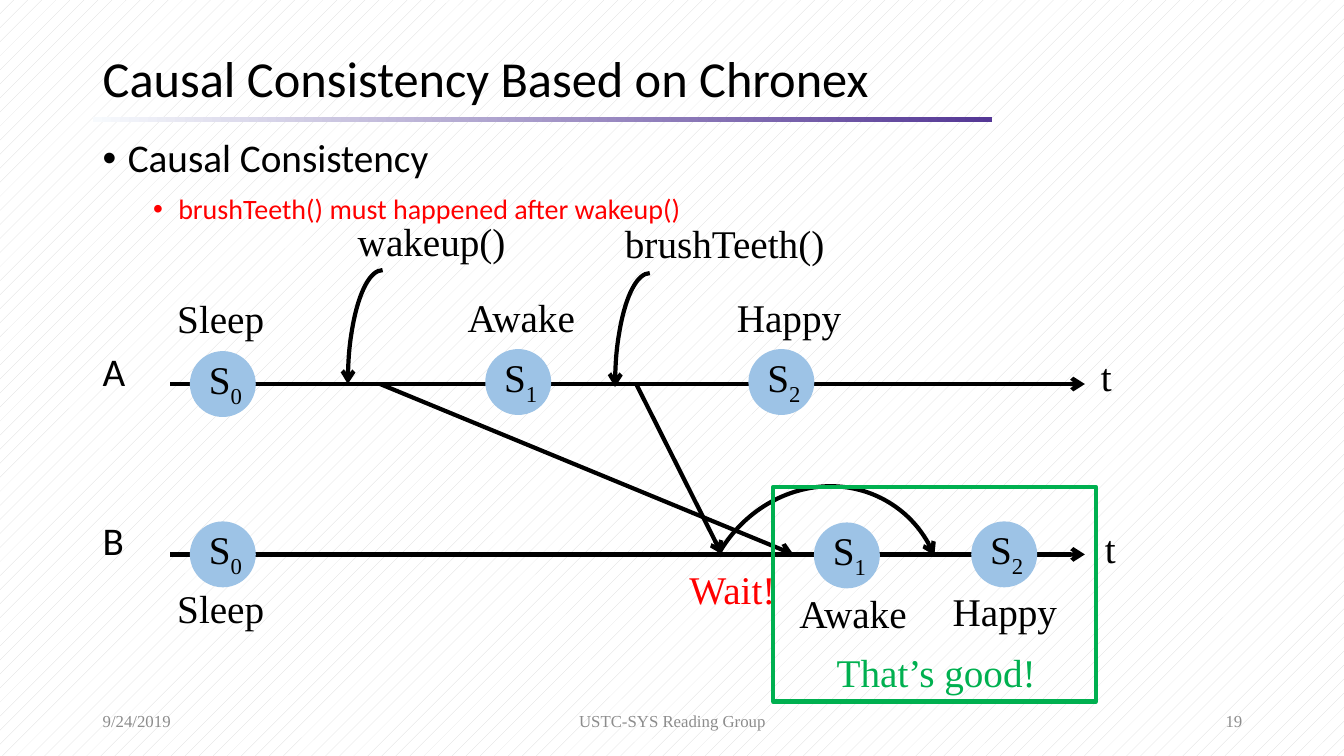
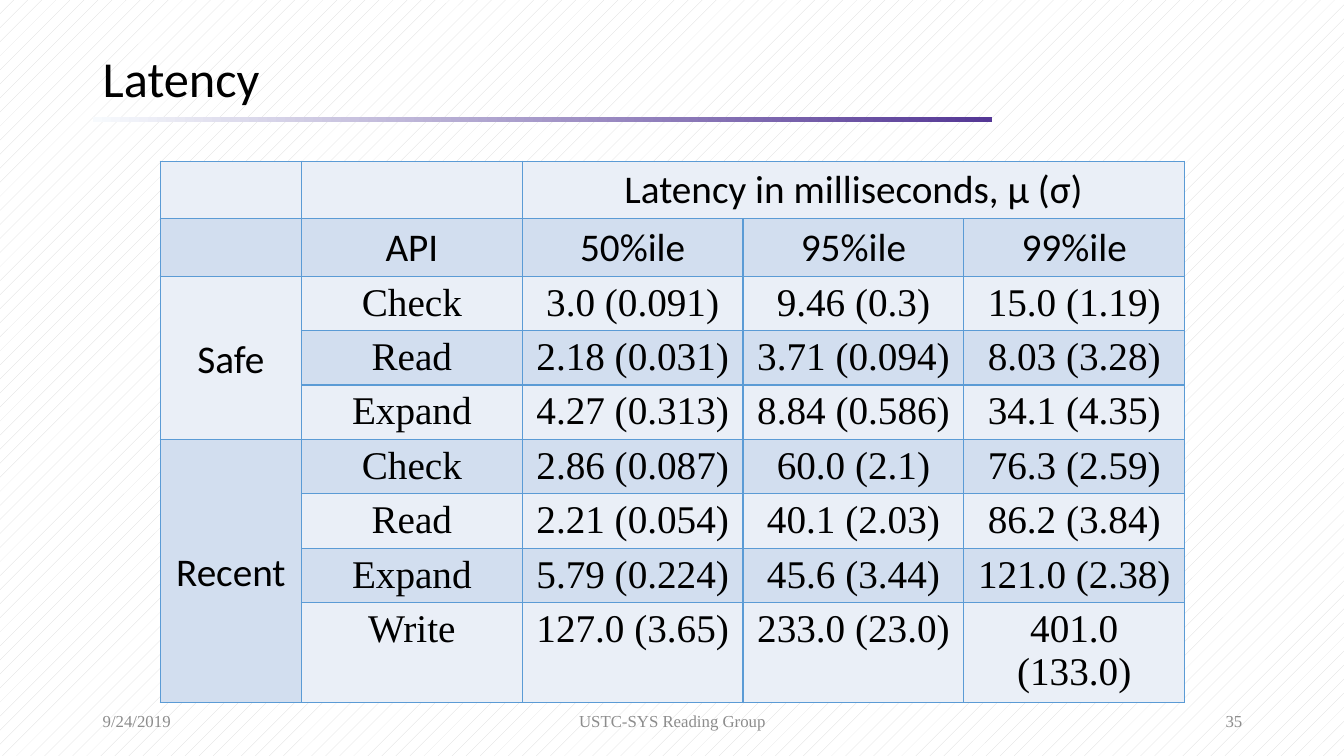
import dataclasses
import typing

import lxml.etree
import pptx
import pptx.dml.color
import pptx.enum.dml
import pptx.enum.shapes
import pptx.enum.text
import pptx.oxml.ns
import pptx.util

Inches = pptx.util.Inches
Pt = pptx.util.Pt
RGBColor = pptx.dml.color.RGBColor
Shapes = pptx.enum.shapes.MSO_SHAPE
Align = pptx.enum.text.PP_ALIGN
Anchor = pptx.enum.text.MSO_ANCHOR
qn = pptx.oxml.ns.qn

BLACK = RGBColor(0x00, 0x00, 0x00)
WHITE = RGBColor(0xFF, 0xFF, 0xFF)
RED = RGBColor(0xFF, 0x00, 0x00)
GREEN = RGBColor(0x00, 0xB0, 0x50)
GRAY = RGBColor(0x8C, 0x8C, 0x8C)
HATCH = RGBColor(0xD9, 0xD9, 0xD9)
BAR_START = RGBColor(0xF7, 0xFA, 0xFD)
BAR_END = RGBColor(0x54, 0x37, 0x95)
STATE_BLUE = RGBColor(0x9D, 0xC3, 0xE6)
BORDER_BLUE = RGBColor(0x5B, 0x9B, 0xD5)
BANDS = (RGBColor(0xEA, 0xEF, 0xF7), RGBColor(0xD2, 0xDE, 0xEF))

SANS = "Calibri"
SERIF = "Times New Roman"
STATE_SIZE = 0.64
LABEL_HEIGHT = 0.57
AXIS_A = 3.81
AXIS_B = 5.5


class Box(typing.NamedTuple):
    left: float
    top: float
    width: float
    height: float

    def lengths(self) -> list:
        return [Inches(side) for side in self]


@dataclasses.dataclass
class State:
    left: float
    top: float
    index: str


@dataclasses.dataclass
class Label:
    text: str
    left: float
    top: float
    width: float = 1.37
    color: RGBColor = BLACK


@dataclasses.dataclass
class Arrow:
    start: tuple[float, float]
    end: tuple[float, float]


@dataclasses.dataclass
class Arc:
    box: Box
    end_angle: float = 0
    rotation: float = 0
    flipped: bool = False


STATES = (
    State(1.89, 3.49, "0"), State(4.82, 3.47, "1"), State(7.43, 3.47, "2"),
    State(1.89, 5.18, "0"), State(8.08, 5.19, "1"), State(9.64, 5.18, "2"),
)
LABELS = (
    Label("Sleep", 1.66, 2.87), Label("Awake", 4.54, 2.86), Label("Happy", 7.21, 2.86),
    Label("Sleep", 1.66, 5.75), Label("Awake", 7.83, 5.8), Label("Happy", 9.35, 5.78),
    Label("wakeup()", 3.45, 2.11, 2.53), Label("brushTeeth()", 6.1, 2.13, 2.53),
    Label("t", 10.82, 3.45), Label("t", 10.86, 5.15),
    Label("Wait!", 6.74, 5.56, color=RED),
    Label("That’s good!", 8.2, 6.38, 2.32, GREEN),
)
ARROWS = (
    Arrow((1.69, AXIS_A), (10.76, AXIS_A)),
    Arrow((1.69, AXIS_B), (10.76, AXIS_B)),
    Arrow((3.77, AXIS_A), (7.87, AXIS_B)),
    Arrow((6.31, AXIS_A), (7.16, AXIS_B)),
)
ARCS = (
    Arc(Box(3.45, 2.68, 0.69, 2.26), flipped=True),
    Arc(Box(6.1, 2.71, 0.69, 2.26), flipped=True),
    Arc(Box(6.87, 4.9, 2.57, 2.37), end_angle=19.95, rotation=299.4),
)

LATENCY_ROWS = (
    ("", "", "Latency in milliseconds, µ (σ)", "", ""),
    ("", "API", "50%ile", "95%ile", "99%ile"),
    ("Safe", "Check", "3.0 (0.091)", "9.46 (0.3)", "15.0 (1.19)"),
    ("", "Read", "2.18 (0.031)", "3.71 (0.094)", "8.03 (3.28)"),
    ("", "Expand", "4.27 (0.313)", "8.84 (0.586)", "34.1 (4.35)"),
    ("Recent", "Check", "2.86 (0.087)", "60.0 (2.1)", "76.3 (2.59)"),
    ("", "Read", "2.21 (0.054)", "40.1 (2.03)", "86.2 (3.84)"),
    ("", "Expand", "5.79 (0.224)", "45.6 (3.44)", "121.0 (2.38)"),
    ("", "Write", "127.0 (3.65)", "233.0 (23.0)", "401.0 (133.0)"),
)
COLUMN_WIDTHS = [1.4] + [2.19] * 4
ROW_HEIGHTS = [0.57] * 2 + [0.54] * 6 + [0.96]
MERGES = (((0, 2), (0, 4)), ((2, 0), (4, 0)), ((5, 0), (8, 0)))


def write(frame, text: str, *, font: str = SERIF, size: float = 28,
          color: RGBColor = BLACK, align=Align.LEFT, spacing: float = 1.0,
          before: float = 0, bullet_at: float | None = None, subscript: str = "") -> None:
    paragraph = frame.paragraphs[0]
    if paragraph.runs:
        paragraph = frame.add_paragraph()
    paragraph.alignment = align
    paragraph.line_spacing = spacing
    if before:
        paragraph.space_before = Pt(before)
    if bullet_at is not None:
        properties = paragraph._p.get_or_add_pPr()
        properties.set("marL", str(Inches(bullet_at)))
        properties.set("indent", str(Inches(-0.25)))
        lxml.etree.SubElement(properties, qn("a:buFont")).set("typeface", "Arial")
        lxml.etree.SubElement(properties, qn("a:buChar")).set("char", "•")
    for part in filter(None, (text, subscript)):
        run = paragraph.add_run()
        run.text = part
        run.font.name = font
        run.font.size = Pt(size)
        run.font.color.rgb = color
    if subscript:
        run._r.get_or_add_rPr().set("baseline", "-25000")


def add_frame(slide, box: Box, anchor=Anchor.TOP):
    frame = slide.shapes.add_textbox(*box.lengths()).text_frame
    frame.word_wrap = True
    frame.vertical_anchor = anchor
    return frame


def add_plain_shape(slide, preset, box: Box):
    shape = slide.shapes.add_shape(preset, *box.lengths())
    shape.shadow.inherit = False
    shape.fill.background()
    return shape


def set_line(line, color: RGBColor, width: float, arrow: bool = False) -> None:
    line.color.rgb = color
    line.width = Pt(width)
    if arrow:
        tail = lxml.etree.SubElement(line._get_or_add_ln(), qn("a:tailEnd"))
        tail.set("type", "arrow")


def add_arrow(slide, arrow: Arrow) -> None:
    ends = [Inches(value) for value in arrow.start + arrow.end]
    connector = slide.shapes.add_connector(pptx.enum.shapes.MSO_CONNECTOR.STRAIGHT, *ends)
    set_line(connector.line, BLACK, 3, arrow=True)
    lxml.etree.SubElement(connector._element.spPr, qn("a:effectLst"))


def add_arc(slide, arc: Arc) -> None:
    curve = add_plain_shape(slide, Shapes.ARC, arc.box)
    curve.adjustments[0] = 162
    curve.adjustments[1] = arc.end_angle
    curve.rotation = arc.rotation
    if arc.flipped:
        curve._element.spPr.find(qn("a:xfrm")).set("flipH", "1")
    set_line(curve.line, BLACK, 3, arrow=True)


def add_state(slide, state: State) -> None:
    circle = add_plain_shape(
        slide, Shapes.OVAL, Box(state.left, state.top, STATE_SIZE, STATE_SIZE))
    circle.fill.solid()
    circle.fill.fore_color.rgb = STATE_BLUE
    set_line(circle.line, STATE_BLUE, 1)
    frame = circle.text_frame
    frame.word_wrap = False
    frame.vertical_anchor = Anchor.MIDDLE
    frame.margin_left, frame.margin_right = Inches(0.05), 0
    frame.margin_top, frame.margin_bottom = 0, Inches(0.04)
    write(frame, "S", subscript=state.index, align=Align.CENTER)


def start_slide(deck, title: str, number: int):
    slide = deck.slides.add_slide(deck.slide_layouts[6])
    backdrop = slide.background.fill
    backdrop.patterned()
    backdrop.pattern = pptx.enum.dml.MSO_PATTERN.PERCENT_5
    backdrop.fore_color.rgb = HATCH
    backdrop.back_color.rgb = WHITE

    bar = add_plain_shape(slide, Shapes.RECTANGLE, Box(0.92, 1.16, 8.92, 0.05))
    bar.line.fill.background()
    bar.fill.gradient()
    bar.fill.gradient_angle = 0
    for stop, position, color in zip(bar.fill.gradient_stops, (0, 1), (BAR_START, BAR_END)):
        stop.position = position
        stop.color.rgb = color

    write(add_frame(slide, Box(0.92, 0.43, 11.5, 0.75), Anchor.MIDDLE), title,
          font=SANS, size=36, spacing=0.9)
    footers = (
        ("9/24/2019", 0.92, 3, Align.LEFT),
        ("USTC-SYS Reading Group", 4.42, 4.5, Align.CENTER),
        (str(number), 9.42, 3, Align.RIGHT),
    )
    for text, left, width, align in footers:
        write(add_frame(slide, Box(left, 6.95, width, 0.4), Anchor.MIDDLE), text,
              size=12, color=GRAY, align=align)
    return slide


def build_consistency(deck) -> None:
    slide = start_slide(deck, "Causal Consistency Based on Chronex", 19)
    points = add_frame(slide, Box(0.92, 1.33, 11.5, 1))
    write(points, "Causal Consistency", font=SANS, spacing=0.9, bullet_at=0.25)
    write(points, "brushTeeth() must happened after wakeup()", font=SANS, size=20,
          color=RED, spacing=0.9, before=10, bullet_at=0.75)
    for client, top in (("A", 3.39), ("B", 5.07)):
        write(add_frame(slide, Box(0.92, top, 0.6, LABEL_HEIGHT), Anchor.MIDDLE), client,
              font=SANS)
    for arrow in ARROWS:
        add_arrow(slide, arrow)
    for arc in ARCS:
        add_arc(slide, arc)
    for state in STATES:
        add_state(slide, state)
    for label in LABELS:
        write(add_frame(slide, Box(label.left, label.top, label.width, LABEL_HEIGHT)),
              label.text, color=label.color)
    good_region = add_plain_shape(slide, Shapes.RECTANGLE, Box(7.67, 4.83, 3.2, 2.13))
    set_line(good_region.line, GREEN, 3)


def style_cell(cell, band: RGBColor) -> None:
    properties = cell._tc.get_or_add_tcPr()
    for side in ("a:lnL", "a:lnR", "a:lnT", "a:lnB"):
        border = lxml.etree.SubElement(properties, qn(side), w=str(Pt(1)))
        paint = lxml.etree.SubElement(border, qn("a:solidFill"))
        lxml.etree.SubElement(paint, qn("a:srgbClr")).set("val", str(BORDER_BLUE))
    cell.fill.solid()
    cell.fill.fore_color.rgb = band
    cell.margin_top = Inches(0.05)
    cell.margin_bottom = Inches(0.01)


def build_latency(deck) -> None:
    slide = start_slide(deck, "Latency", 35)
    area = Box(1.59, 1.6, sum(COLUMN_WIDTHS), sum(ROW_HEIGHTS))
    latency = slide.shapes.add_table(
        len(ROW_HEIGHTS), len(COLUMN_WIDTHS), *area.lengths()).table
    latency.first_row = False
    latency.horz_banding = False
    for column, width in zip(latency.columns, COLUMN_WIDTHS):
        column.width = Inches(width)
    for row, height in zip(latency.rows, ROW_HEIGHTS):
        row.height = Inches(height)
    for first, last in MERGES:
        latency.cell(*first).merge(latency.cell(*last))
    for r, values in enumerate(LATENCY_ROWS):
        for c, value in enumerate(values):
            cell = latency.cell(r, c)
            style_cell(cell, BANDS[r % 2])
            if c == 0:
                cell.vertical_anchor = Anchor.MIDDLE
            if value:
                write(cell.text_frame, value, align=Align.CENTER,
                      font=SANS if r < 2 or c == 0 else SERIF)


def main() -> None:
    deck = pptx.Presentation()
    deck.slide_width = Inches(13.33)
    deck.slide_height = Inches(7.5)
    build_consistency(deck)
    build_latency(deck)
    deck.save("out.pptx")


if __name__ == "__main__":
    main()
